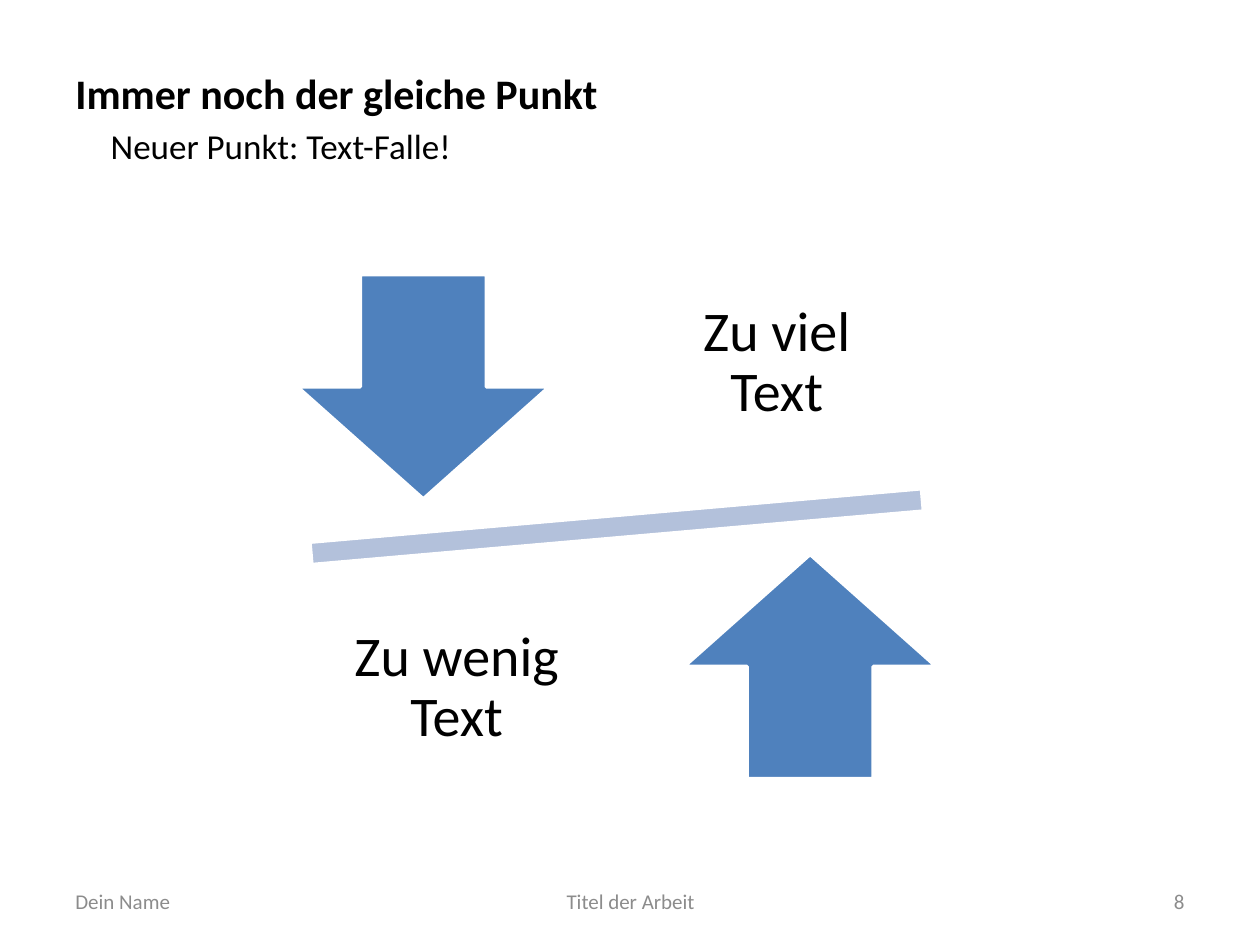
from pptx import Presentation
from pptx.dml.color import RGBColor
from pptx.enum.shapes import MSO_SHAPE
from pptx.enum.text import MSO_ANCHOR, PP_ALIGN
from pptx.util import Inches, Pt

DOWN, UP, MINUS = MSO_SHAPE.DOWN_ARROW, MSO_SHAPE.UP_ARROW, MSO_SHAPE.MATH_MINUS
TOP, MIDDLE = MSO_ANCHOR.TOP, MSO_ANCHOR.MIDDLE
LEFT, CENTER, RIGHT = PP_ALIGN.LEFT, PP_ALIGN.CENTER, PP_ALIGN.RIGHT
BLACK, GREY, WHITE, BLUE, PALE_BLUE = "000000", "8C8C8C", "FFFFFF", "4F81BD", "B3C1DB"


def color(value):
    return RGBColor.from_string(value)


class SlideBuilder:
    """Holds the style and the current slide and adds elements to it."""

    font = "Calibri"
    outline_width = Pt(2)

    def __init__(self, slide):
        self.slide = slide

    def text(self, words, box, size, ink=BLACK, bold=False, align=LEFT,
             anchor=MIDDLE, spacing=None, margin=None):
        label = self.slide.shapes.add_textbox(*map(Inches, box))
        frame = label.text_frame
        frame_format = {"word_wrap": True, "vertical_anchor": anchor}
        if margin is not None:
            for side in ("left", "top", "right", "bottom"):
                frame_format[f"margin_{side}"] = Inches(margin)
        for name, value in frame_format.items():
            setattr(frame, name, value)
        paragraph = frame.paragraphs[0]
        paragraph.alignment = align
        paragraph.line_spacing = spacing
        run = paragraph.add_run()
        run.text = words
        for name, value in {"name": self.font, "size": Pt(size), "bold": bold}.items():
            setattr(run.font, name, value)
        run.font.color.rgb = color(ink)

    def shape(self, preset, box, fill, rotation=0):
        figure = self.slide.shapes.add_shape(preset, *map(Inches, box))
        figure.shadow.inherit = False
        figure.rotation = rotation
        figure.fill.solid()
        figure.fill.fore_color.rgb = color(fill)
        figure.line.color.rgb = color(WHITE)
        figure.line.width = self.outline_width


def main():
    deck = Presentation()
    deck.slide_width, deck.slide_height = Inches(10), Inches(7.5)
    builder = SlideBuilder(deck.slides.add_slide(deck.slide_layouts[6]))

    builder.text("Immer noch der gleiche Punkt", (0.5, 0.3, 9, 0.87), 24, bold=True)
    builder.text("Neuer Punkt: Text-Falle!", (0.78, 0.94, 7.19, 0.44), 20, anchor=TOP)

    footers = [("Dein Name", 0.5, 2.33, LEFT), ("Titel der Arbeit", 3.42, 3.17, CENTER),
               ("8", 7.17, 2.33, RIGHT)]
    for words, left, width, align in footers:
        builder.text(words, (left, 6.95, width, 0.4), 12, ink=GREY, align=align)

    builder.shape(MINUS, (1.58, 3.8, 6.63, 0.76), PALE_BLUE, rotation=355)
    sides = [(DOWN, 2.36, 2.18, "Zu viel Text", 5.1, 1.95),
             (UP, 5.43, 4.4, "Zu wenig Text", 2.56, 4.53)]
    for arrow, arrow_left, arrow_top, words, left, top in sides:
        builder.shape(arrow, (arrow_left, arrow_top, 2, 1.78), BLUE)
        builder.text(words, (left, top, 2.13, 1.87), 32, align=CENTER,
                     spacing=0.9, margin=0.2)

    deck.save("out.pptx")


if __name__ == "__main__":
    main()
